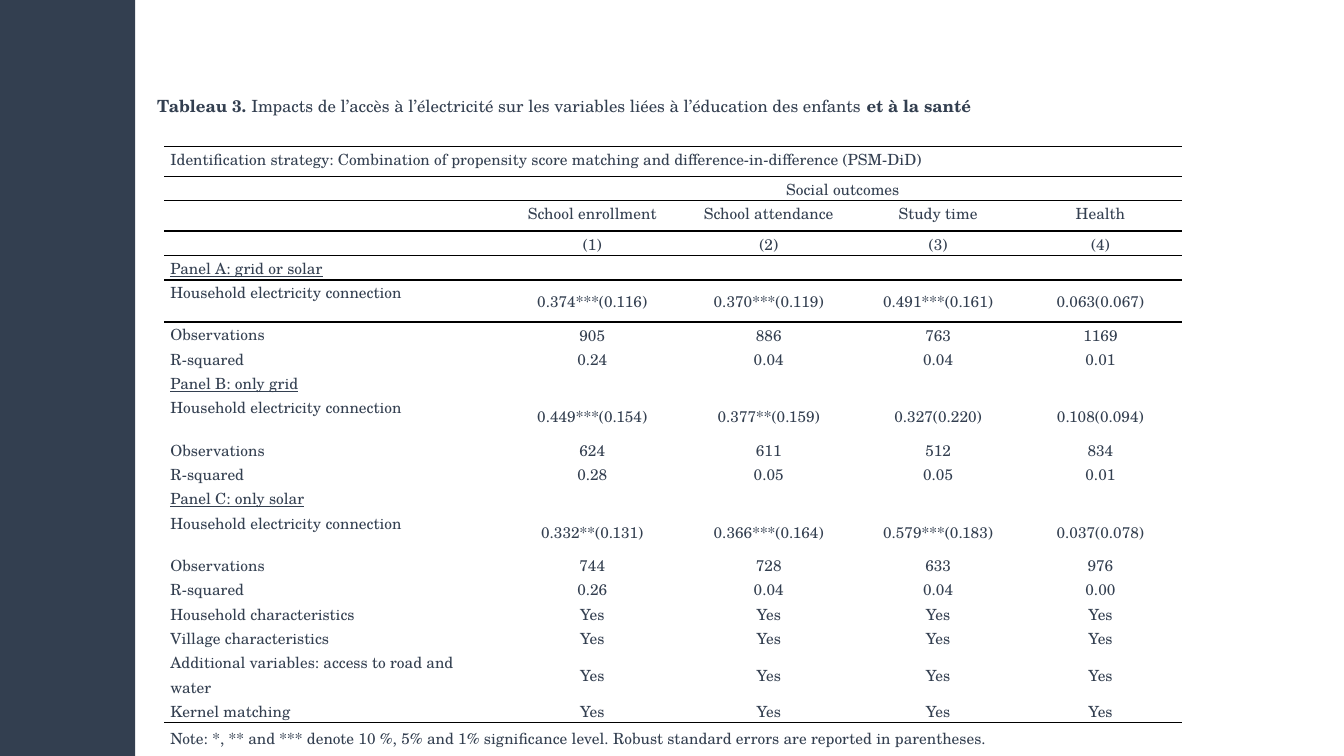
"""Build the slide with the table of electricity access impacts on education and health."""
from lxml import etree
from pptx import Presentation
from pptx import util as u
from pptx.dml.color import RGBColor
from pptx.enum import shapes, text
from pptx.oxml.ns import qn

INK = "333F50"
FONT = "TeX Gyre Schola"
TOP, MIDDLE = text.MSO_ANCHOR.TOP, text.MSO_ANCHOR.MIDDLE


def rgb(value):
    return RGBColor.from_string(value)


def add_run(p, words, **formats):
    r = p.add_run()
    r.text = words
    r.font.color.rgb = rgb(INK)
    for name, value in {"name": FONT, **formats}.items():
        setattr(r.font, name, value)


prs = Presentation()
prs.slide_width, prs.slide_height = u.Inches(13.33), u.Inches(7.5)
s = prs.slides.add_slide(prs.slide_layouts[6])

yes = ["Yes"] * 4
connection = "Household electricity connection"
rows = [
    ["Identification strategy: Combination of propensity score matching and difference-in-difference (PSM-DiD)"],
    ["", "Social outcomes"],
    ["", "School enrollment", "School attendance", "Study time", "Health"],
    ["", "(1)", "(2)", "(3)", "(4)"],
    ["Panel A: grid or solar"],
    [connection, "0.374***(0.116)", "0.370***(0.119)", "0.491***(0.161)", "0.063(0.067)"],
    ["Observations", "905", "886", "763", "1169"],
    ["R-squared", "0.24", "0.04", "0.04", "0.01"],
    ["Panel B: only grid"],
    [connection, "0.449***(0.154)", "0.377**(0.159)", "0.327(0.220)", "0.108(0.094)"],
    ["Observations", "624", "611", "512", "834"],
    ["R-squared", "0.28", "0.05", "0.05", "0.01"],
    ["Panel C: only solar"],
    [connection, "0.332**(0.131)", "0.366***(0.164)", "0.579***(0.183)", "0.037(0.078)"],
    ["Observations", "744", "728", "633", "976"],
    ["R-squared", "0.26", "0.04", "0.04", "0.00"],
    ["Household characteristics", *yes],
    ["Village characteristics", *yes],
    ["Additional variables: access to road and water", *yes],
    ["Kernel matching", *yes],
    ["Note: *, ** and *** denote 10 %, 5% and 1% significance level. "
     "Robust standard errors are reported in parentheses."],
]
widths = [3.37, 1.75, 1.75, 1.61, 1.61]
tall = {0: 0.3, 2: 0.3, 5: 0.42, 9: 0.42, 13: 0.42, 18: 0.3, 20: 0.3}
rules = {0: 1, 1: 1, 2: 1, 3: 1, 4: 1, 5: 1.5, 20: 1}

frame = s.shapes.add_table(len(rows), len(widths), u.Inches(1.63), u.Inches(1.45),
                           u.Inches(10.08), u.Inches(5.01))
table = frame.table
table.first_row = table.horz_banding = False
style = table._tbl.tblPr.find(qn("a:tableStyleId"))
style.text = "{2D5ABB26-0587-4C30-8999-92F81FD0307C}"
for col, width in zip(table.columns, widths):
    col.width = u.Inches(width)

for i, row in enumerate(rows):
    table.rows[i].height = u.Inches(tall.get(i, 0.15))
    if len(row) < len(widths):
        table.cell(i, len(row) - 1).merge(table.cell(i, len(widths) - 1))
    for j in range(len(widths)):
        words = row[j] if j < len(row) else ""
        cell = table.cell(i, j)
        cell.fill.background()
        cell.margin_left = cell.margin_right = u.Inches(0.06)
        cell.margin_top = cell.margin_bottom = 0
        cell.vertical_anchor = MIDDLE if i > 15 or (i > 2 and j) else TOP
        p = cell.text_frame.paragraphs[0]
        p.line_spacing, p.space_after = 1.07, u.Pt(8)
        p.alignment = text.PP_ALIGN.CENTER if j else text.PP_ALIGN.LEFT
        if words:
            add_run(p, words, size=u.Pt(11), underline=words.startswith("Panel"))
        else:
            etree.SubElement(p._p, qn("a:endParaRPr"), sz="1100")
        tcPr = cell._tc.get_or_add_tcPr()
        for tag, edge in (("a:lnB", i + 1), ("a:lnT", i)):
            if edge in rules:
                ln = etree.Element(qn(tag), w=str(u.Pt(rules[edge])))
                fill = etree.SubElement(ln, qn("a:solidFill"))
                etree.SubElement(fill, qn("a:srgbClr"), val="000000")
                tcPr.insert(0, ln)

title = s.shapes.add_textbox(u.Inches(1.46), u.Inches(0.9), u.Inches(8.3), u.Inches(0.3))
tf = title.text_frame
tf.auto_size = text.MSO_AUTO_SIZE.SHAPE_TO_FIT_TEXT
for words, bold in (
    ("Tableau 3. ", True),
    ("Impacts de l’accès à l’électricité sur les variables liées à l’éducation des enfants", False),
    (" et à la santé", True),
):
    add_run(tf.paragraphs[0], words, size=u.Pt(12), bold=bold)

sidebar = s.shapes.add_shape(shapes.MSO_SHAPE.RECTANGLE, 0, 0, u.Inches(1.34), u.Inches(7.5))
sidebar.shadow.inherit = False
sidebar.fill.solid()
sidebar.fill.fore_color.rgb = rgb(INK)
sidebar.line.fill.background()

prs.save("out.pptx")
